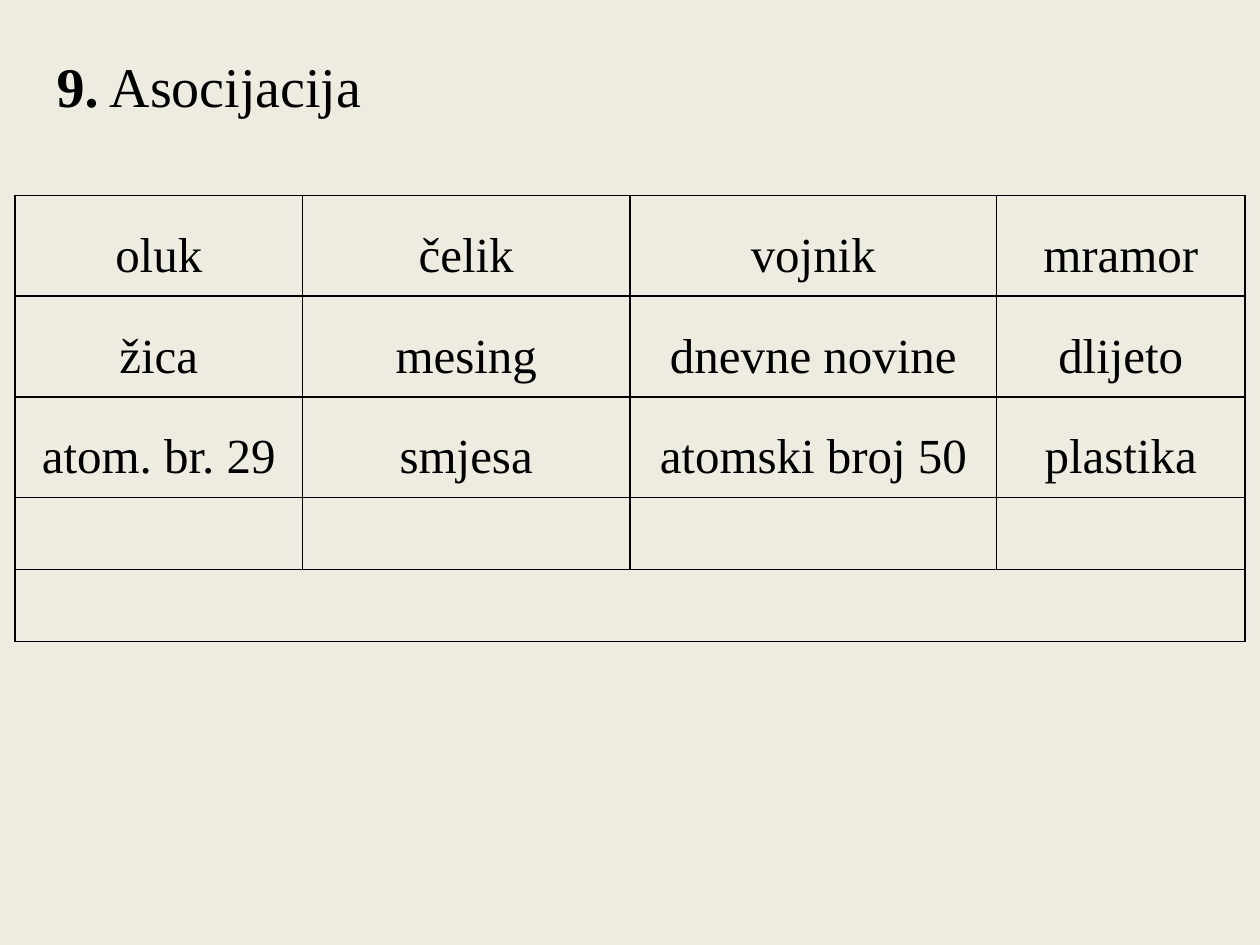
from dataclasses import dataclass

from lxml.etree import SubElement
from pptx import Presentation
from pptx.dml.color import RGBColor
from pptx.enum.text import MSO_ANCHOR as Anchor, PP_ALIGN as Align
from pptx.oxml.ns import qn
from pptx.util import Inches, Pt


@dataclass(frozen=True)
class Theme:
    background: str = "EEECE1"
    ink: str = "000000"
    font: str = "Times New Roman"
    title_size: int = 32
    cell_size: int = 28
    border_width: int = 1


THEME = Theme()

CLUES = [
    ["oluk", "čelik", "vojnik", "mramor"],
    ["žica", "mesing", "dnevne novine", "dlijeto"],
    ["atom. br. 29", "smjesa", "atomski broj 50", "plastika"],
]
COLUMN_WIDTHS = [2.28, 2.6, 2.91, 1.97]
CLUE_HEIGHT = 0.8
ANSWER_HEIGHT = 0.57


def add_text(paragraph, text, *, size, bold=False, align=Align.LEFT, spacing=None):
    paragraph.alignment = align
    if spacing:
        paragraph.line_spacing = spacing
    run = paragraph.add_run()
    run.text = text
    run.font.name = THEME.font
    run.font.size = Pt(size)
    run.font.bold = bold
    run.font.color.rgb = RGBColor.from_string(THEME.ink)


def add_title(slide, number, text):
    title = slide.shapes.title
    title.left, title.top = Inches(0.35), Inches(0.36)
    title.width, title.height = Inches(2.65), Inches(0.64)
    frame = title.text_frame
    frame.word_wrap = False
    frame.vertical_anchor = Anchor.TOP
    paragraph = frame.paragraphs[0]
    add_text(paragraph, number, size=THEME.title_size, bold=True)
    add_text(paragraph, text, size=THEME.title_size)


def style_cell(cell):
    properties = cell._tc.get_or_add_tcPr()
    for side in ("lnL", "lnR", "lnT", "lnB"):
        line = SubElement(properties, qn(f"a:{side}"), w=str(Pt(THEME.border_width)))
        fill = SubElement(line, qn("a:solidFill"))
        SubElement(fill, qn("a:srgbClr"), val=THEME.ink)
    cell.fill.background()


def add_clue_table(slide):
    # Clue rows, then a row of column answers and the final answer
    heights = [CLUE_HEIGHT] * len(CLUES) + [ANSWER_HEIGHT] * 2
    table = slide.shapes.add_table(
        len(heights), len(COLUMN_WIDTHS), Inches(0.12), Inches(1.55),
        Inches(sum(COLUMN_WIDTHS)), Inches(sum(heights)),
    ).table
    table.first_row = table.horz_banding = False
    for column, width in zip(table.columns, COLUMN_WIDTHS):
        column.width = Inches(width)
    for row, height in zip(table.rows, heights):
        row.height = Inches(height)
        for cell in row.cells:
            style_cell(cell)
    for row, clues in zip(table.rows, CLUES):
        for cell, clue in zip(row.cells, clues):
            add_text(cell.text_frame.paragraphs[0], clue, size=THEME.cell_size,
                     align=Align.CENTER, spacing=1.5)

    # The final answer spans all columns
    last = len(heights) - 1
    table.cell(last, 0).merge(table.cell(last, len(COLUMN_WIDTHS) - 1))


def main():
    presentation = Presentation()
    presentation.slide_width, presentation.slide_height = Inches(10), Inches(7.5)
    slide = presentation.slides.add_slide(presentation.slide_layouts[5])
    slide.background.fill.solid()
    slide.background.fill.fore_color.rgb = RGBColor.from_string(THEME.background)
    add_title(slide, "9.", " Asocijacija")
    add_clue_table(slide)
    presentation.save("out.pptx")


if __name__ == "__main__":
    main()
